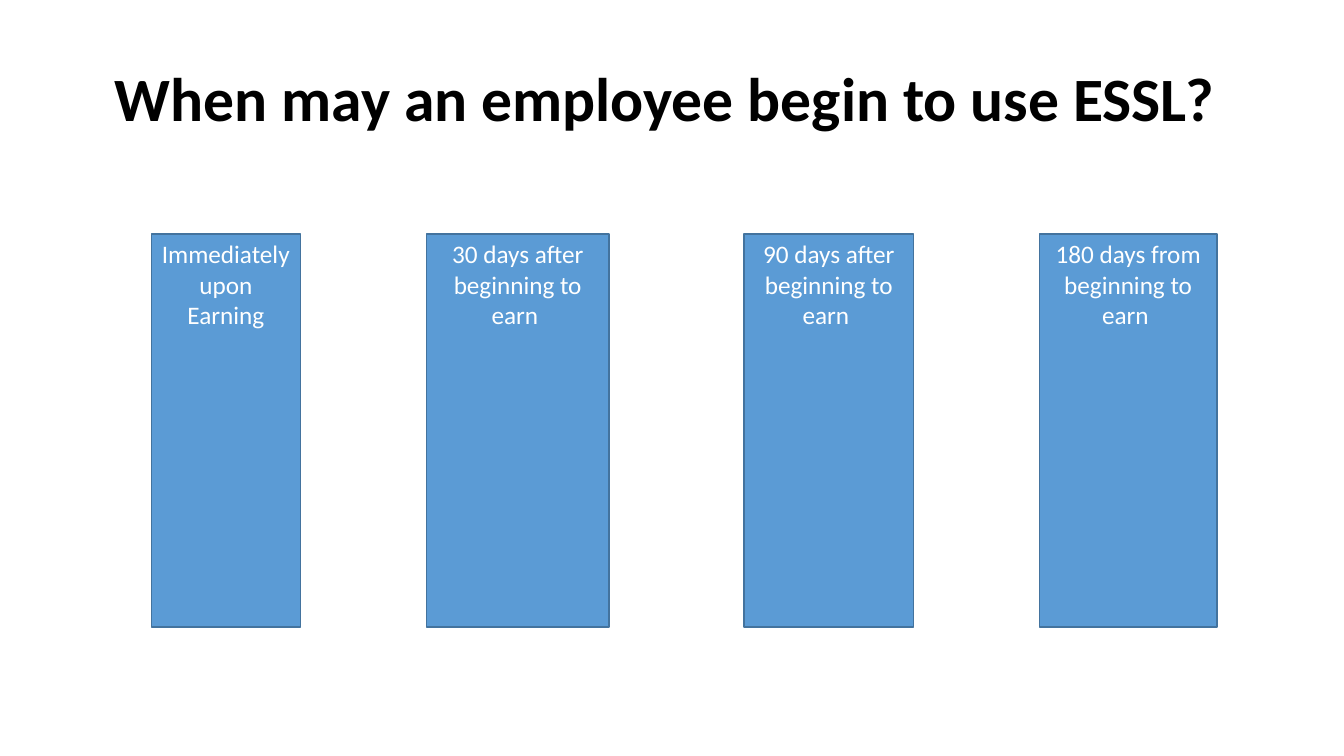
"""Build the quiz slide on when an employee may begin to use ESSL."""
import pptx
import pptx.dml.color
import pptx.enum.shapes
import pptx.enum.text
import pptx.util

Inches = pptx.util.Inches
Pt = pptx.util.Pt
RGB = pptx.dml.color.RGBColor.from_string
Anchor = pptx.enum.text.MSO_ANCHOR
Align = pptx.enum.text.PP_ALIGN

theme = {
    "fill": RGB("5B9BD5"),
    "line": RGB("43739E"),
    "title": {"name": "Calibri", "size": Pt(44), "bold": True, "color": RGB("000000")},
    "choice": {"name": "Calibri", "size": Pt(18), "bold": False, "color": RGB("FFFFFF")},
}


def write(shape, text, style, anchor, space):
    frame = shape.text_frame
    frame.text = text
    frame.word_wrap = True
    frame.auto_size = pptx.enum.text.MSO_AUTO_SIZE.NONE
    frame.vertical_anchor = anchor
    para = frame.paragraphs[0]
    para.alignment = Align.CENTER
    para.line_spacing = space
    font = para.runs[0].font
    for key, value in theme[style].items():
        if key == "color":
            font.color.rgb = value
        else:
            setattr(font, key, value)


deck = pptx.Presentation()
deck.slide_width = Inches(13.33)
deck.slide_height = Inches(7.5)
slide = deck.slides.add_slide(deck.slide_layouts[5])

title = slide.shapes.title
place = {"left": 0.92, "top": 0.4, "width": 11.5, "height": 1.21}
for key, value in place.items():
    setattr(title, key, Inches(value))
write(title, "When may an employee begin to use ESSL? ", "title", Anchor.MIDDLE, 0.9)

choices = [
    (1.5, 1.48, "Immediately upon Earning"),
    (4.23, 1.81, "30 days after beginning to earn "),
    (7.38, 1.68, "90 days after beginning to earn "),
    (10.31, 1.76, "180 days from beginning to earn "),
]
top, height = Inches(2.32), Inches(3.9)
kind = pptx.enum.shapes.MSO_SHAPE.FLOWCHART_PROCESS
for left, width, text in choices:
    box = slide.shapes.add_shape(kind, Inches(left), top, Inches(width), height)
    box.shadow.inherit = False
    box.fill.solid()
    box.fill.fore_color.rgb = theme["fill"]
    box.line.color.rgb = theme["line"]
    box.line.width = Pt(1)
    write(box, text, "choice", Anchor.TOP, 1.0)

deck.save("out.pptx")
